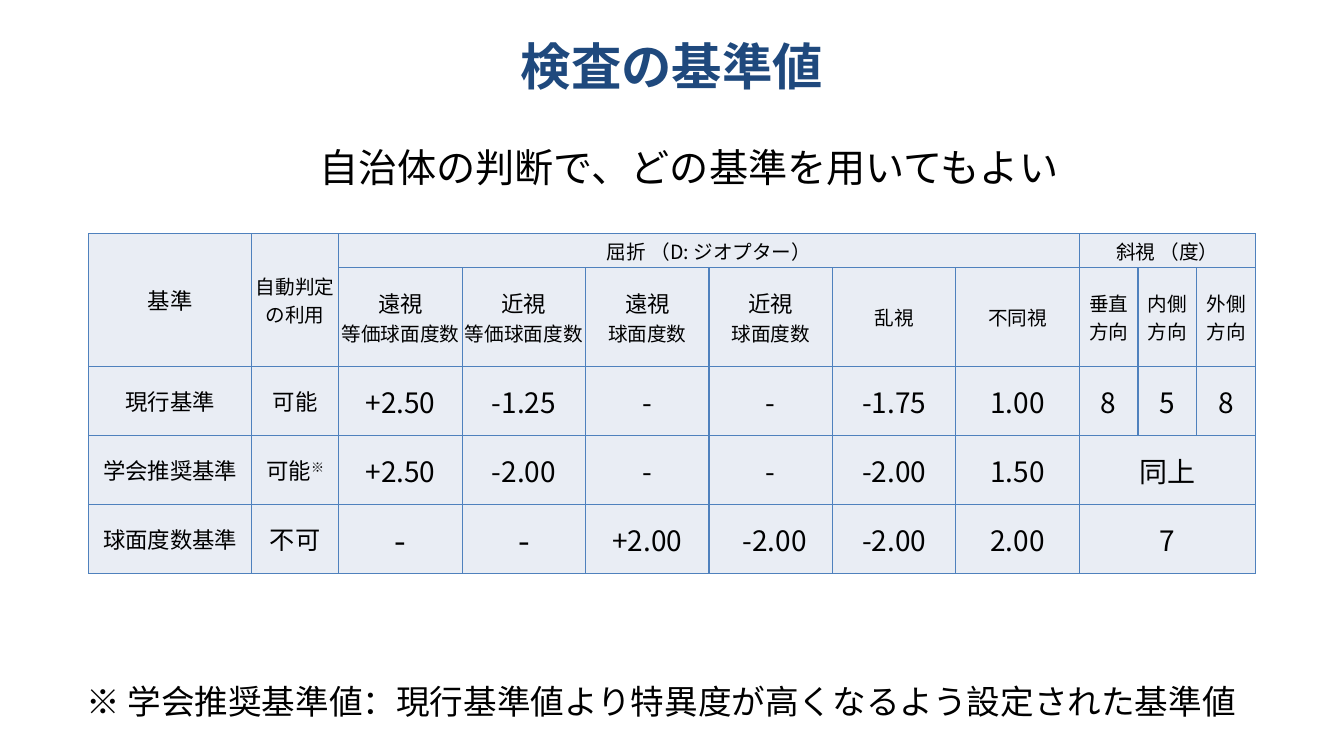
from lxml import etree
from pptx import Presentation
from pptx.dml.color import RGBColor
from pptx.enum import text as t
from pptx.oxml import ns
from pptx.util import Cm, Pt

FONT = "Noto Sans CJK JP"
COLORS = {"title": "1F497D", "body": "000000", "cell": "E9EDF4", "border": "4F81BD"}
ALIGN = t.PP_ALIGN

# Left, top, width, height in cm; text, size, colour, bold, alignment, anchor, line spacing
TEXTS = [
    ((6.05, 0.53, 21.77, 2.21), "検査の基準値", 36, "title", True,
     ALIGN.CENTER, t.MSO_ANCHOR.MIDDLE, None),
    ((6.05, 3.48, 22.61, 1.45), "自治体の判断で、どの基準を用いてもよい", 28, "body", False,
     ALIGN.CENTER, t.MSO_ANCHOR.TOP, None),
    ((1.93, 16.84, 30.71, 1.45),
     "※ 学会推奨基準値：現行基準値より特異度が高くなるよう設定された基準値", 24, "body", False,
     ALIGN.JUSTIFY, t.MSO_ANCHOR.TOP, 1.2),
]

TABLE_ORIGIN = (2.24, 5.89)
COLUMN_WIDTHS = [4.1, 2.2] + [3.11] * 6 + [1.48] * 3
ROW_HEIGHTS = [0.86, 2.48] + [1.74] * 3

# Row, column, rows spanned, columns spanned, lines of (text, size)
HEADERS = [
    (0, 0, 2, 1, [("基準", 16)]),
    (0, 1, 2, 1, [("自動判定", 14), ("の利用", 14)]),
    (0, 2, 1, 6, [("屈折 （D: ジオプター）", 14)]),
    (0, 8, 1, 3, [("斜視 （度）", 14)]),
    (1, 2, 1, 1, [("遠視", 16), ("等価球面度数", 14)]),
    (1, 3, 1, 1, [("近視", 16), ("等価球面度数", 14)]),
    (1, 4, 1, 1, [("遠視", 16), ("球面度数", 14)]),
    (1, 5, 1, 1, [("近視", 16), ("球面度数", 14)]),
    (1, 6, 1, 1, [("乱視", 14)]),
    (1, 7, 1, 1, [("不同視", 14)]),
    (1, 8, 1, 1, [("垂直", 14), ("方向", 14)]),
    (1, 9, 1, 1, [("内側方向", 14)]),
    (1, 10, 1, 1, [("外側", 14), ("方向", 14)]),
]
# A row with one strabismus value shares it across the last three columns
CRITERIA = [
    ["現行基準", "可能", "+2.50", "-1.25", "-", "-", "-1.75", "1.00", "8", "5", "8"],
    ["学会推奨基準", "可能※", "+2.50", "-2.00", "-", "-", "-2.00", "1.50", "同上"],
    ["球面度数基準", "不可", "-", "-", "+2.00", "-2.00", "-2.00", "2.00", "7"],
]
LABEL_SIZE, VALUE_SIZE = 16, 20
SPECIAL_SIZES = {(4, 1): 18, (4, 2): 24, (4, 3): 24}
INDENTED_CELL = (4, 5)


def add_run(paragraph, words, size, color="body", bold=False):
    run = paragraph.add_run()
    run.text = words
    run.font.name = FONT
    run.font.size = Pt(size)
    run.font.bold = bold
    run.font.color.rgb = RGBColor.from_string(COLORS[color])
    etree.SubElement(run.font._element, ns.qn("a:ea"), typeface=FONT)
    return run


def add_text(slide, place, words, size, color, bold, align, anchor, spacing):
    frame = slide.shapes.add_textbox(*map(Cm, place)).text_frame
    frame.word_wrap = True
    frame.vertical_anchor = anchor
    paragraph = frame.paragraphs[0]
    paragraph.alignment = align
    if spacing:
        paragraph.line_spacing = spacing
    add_run(paragraph, words, size, color, bold)


def style_cell(cell):
    properties = cell._tc.get_or_add_tcPr()
    for side in ("lnL", "lnR", "lnT", "lnB"):
        line = etree.SubElement(properties, ns.qn(f"a:{side}"), w=str(Pt(1)))
        fill = etree.SubElement(line, ns.qn("a:solidFill"))
        etree.SubElement(fill, ns.qn("a:srgbClr"), val=COLORS["border"])
    cell.fill.solid()
    cell.fill.fore_color.rgb = RGBColor.from_string(COLORS["cell"])
    cell.vertical_anchor = t.MSO_ANCHOR.MIDDLE
    cell.margin_left = cell.margin_right = cell.margin_top = cell.margin_bottom = 0


def fill_cell(cell, lines):
    frame = cell.text_frame
    for index, (words, size) in enumerate(lines):
        paragraph = frame.add_paragraph() if index else frame.paragraphs[0]
        paragraph.alignment = ALIGN.CENTER
        label, mark, _ = words.partition("※")
        add_run(paragraph, label, size)
        if mark:
            add_run(paragraph, mark, size).font._element.set("baseline", "30000")


def criteria_cells():
    """Yield the body cells in the same form as HEADERS."""
    for row, values in enumerate(CRITERIA, start=2):
        for col, words in enumerate(values):
            last = col == len(values) - 1
            span = len(COLUMN_WIDTHS) - col if last else 1
            size = SPECIAL_SIZES.get((row, col), LABEL_SIZE if col < 2 else VALUE_SIZE)
            yield row, col, 1, span, [(words, size)]


def add_criteria_table(slide):
    size = (sum(COLUMN_WIDTHS), sum(ROW_HEIGHTS))
    table = slide.shapes.add_table(
        len(ROW_HEIGHTS), len(COLUMN_WIDTHS), *map(Cm, TABLE_ORIGIN + size)).table
    table.first_row = table.horz_banding = False
    for column, width in zip(table.columns, COLUMN_WIDTHS):
        column.width = Cm(width)
    for row, height in zip(table.rows, ROW_HEIGHTS):
        row.height = Cm(height)
    for cell in table.iter_cells():
        style_cell(cell)
    for row, col, rows, cols, lines in [*HEADERS, *criteria_cells()]:
        cell = table.cell(row, col)
        if rows * cols > 1:
            cell.merge(table.cell(row + rows - 1, col + cols - 1))
        fill_cell(cell, lines)
    indented = table.cell(*INDENTED_CELL).text_frame.paragraphs[0]
    indented._p.get_or_add_pPr().set("indent", str(Cm(0.2)))


def main():
    deck = Presentation()
    deck.slide_width, deck.slide_height = Cm(33.87), Cm(19.05)
    slide = deck.slides.add_slide(deck.slide_layouts[6])
    add_criteria_table(slide)
    for entry in TEXTS:
        add_text(slide, *entry)
    deck.save("out.pptx")


if __name__ == "__main__":
    main()
